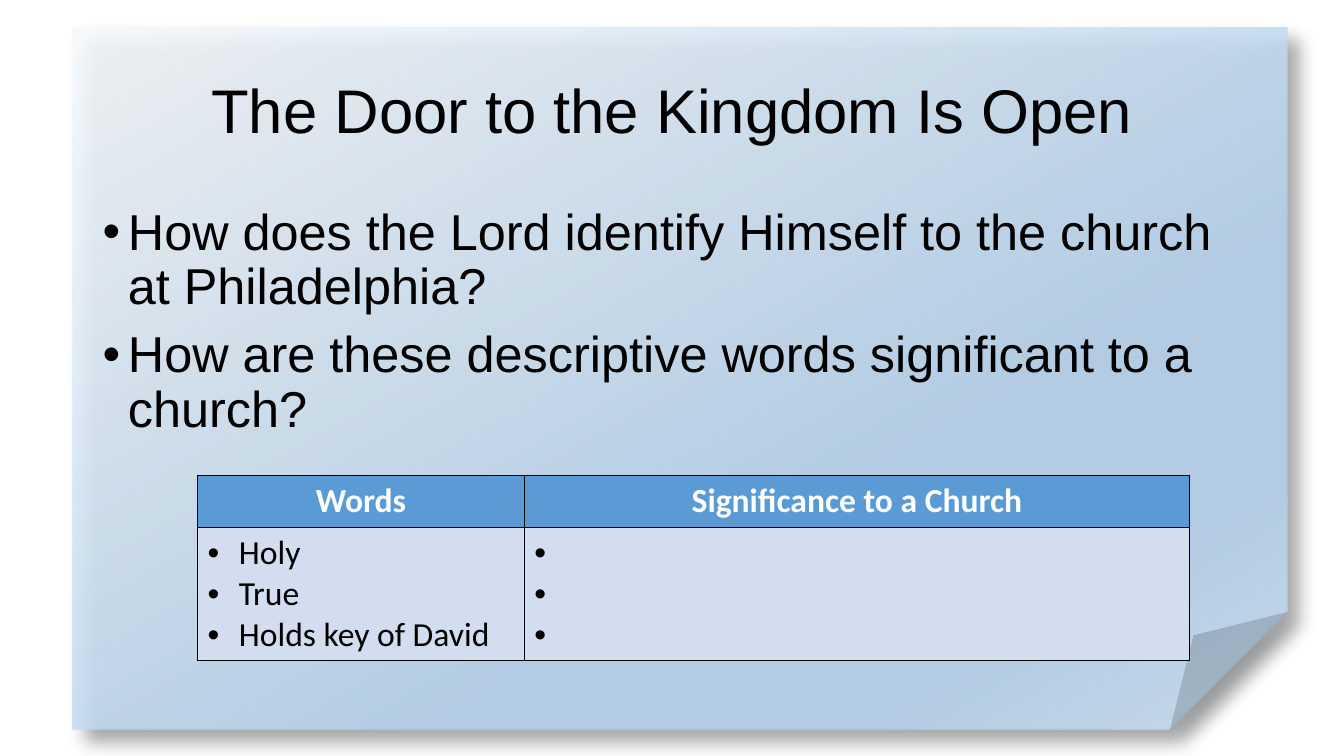
from lxml.etree import SubElement
from pptx import Presentation
from pptx.dml.color import RGBColor
from pptx.enum.shapes import MSO_SHAPE
from pptx.enum.text import MSO_ANCHOR, PP_ALIGN
from pptx.oxml.ns import qn
from pptx.util import Inches, Pt

BLACK, WHITE = "000000", "FFFFFF"
HEADER_BLUE, ROW_BLUE = "5B9BD5", "D2DEEF"


def rgb(value):
    return RGBColor.from_string(value)


def add_xml(parent, tag, **attrs):
    return SubElement(parent, qn(tag), {k: str(v) for k, v in attrs.items()})


def add_color(parent, value, alpha=100):
    color = add_xml(parent, "a:srgbClr", val=value)
    if alpha < 100:
        add_xml(color, "a:alpha", val=alpha * 1000)


class Deck:
    heading_font, table_font = "Arial", "Calibri"

    def __init__(self, prs):
        self.s = prs.slides.add_slide(prs.slide_layouts[6])

    def paragraphs(self, tf, texts, size, font, color=BLACK, bold=False,
                   align=None, indent=None, spacing=None, before=0):
        for i, text in enumerate(texts):
            p = tf.paragraphs[0] if i == 0 else tf.add_paragraph()
            if indent:
                pPr = p._p.get_or_add_pPr()
                pPr.set("marL", str(Inches(indent)))
                pPr.set("indent", str(-Inches(indent)))
                add_xml(pPr, "a:buFont", typeface="Arial")
                add_xml(pPr, "a:buChar", char="•")
            if align is not None:
                p.alignment = align
            if spacing:
                p.line_spacing = spacing
            if i and before:
                p.space_before = Pt(before)
            r = p.add_run()
            r.text = text
            r.font.size, r.font.name, r.font.bold = Pt(size), font, bold
            r.font.color.rgb = rgb(color)

    def text(self, box, texts, size, anchor=MSO_ANCHOR.TOP, **style):
        tf = self.s.shapes.add_textbox(*map(Inches, box)).text_frame
        tf.word_wrap = True
        tf.vertical_anchor = anchor
        self.paragraphs(tf, texts, size, self.heading_font, spacing=0.9, **style)

    def paper(self, box, stops, angle, alpha):
        sp = self.s.shapes.add_shape(MSO_SHAPE.FOLDED_CORNER, *map(Inches, box))
        sp.line.fill.background()
        sp.shadow.inherit = False
        sp.fill.gradient()
        spPr = sp.element.spPr
        # Gradient
        grad = spPr.find(qn("a:gradFill"))
        for child in list(grad):
            grad.remove(child)
        stop_list = add_xml(grad, "a:gsLst")
        for pos, color in stops:
            add_color(add_xml(stop_list, "a:gs", pos=pos * 1000), color, alpha)
        add_xml(grad, "a:lin", ang=angle * 60000, scaled=0)
        # Shadow
        shadow = add_xml(spPr.find(qn("a:effectLst")), "a:outerShdw",
                         blurRad=Pt(13), dist=Pt(13), dir=45 * 60000,
                         algn="tl", rotWithShape=0)
        add_color(shadow, BLACK, 40)

    def cell(self, cell, texts, fill, **style):
        tcPr = cell._tc.get_or_add_tcPr()
        for side in "LRTB":
            line = add_xml(tcPr, f"a:ln{side}", w=Pt(1))
            add_color(add_xml(line, "a:solidFill"), BLACK)
        cell.fill.solid()
        cell.fill.fore_color.rgb = rgb(fill)
        self.paragraphs(cell.text_frame, texts, 24, self.table_font, **style)

    def table(self, box, widths, heights, headers, columns):
        tbl = self.s.shapes.add_table(2, len(widths), *map(Inches, box)).table
        for row, height in zip(tbl.rows, heights):
            row.height = Inches(height)
        for i, width in enumerate(widths):
            tbl.columns[i].width = Inches(width)
            self.cell(tbl.cell(0, i), [headers[i]], HEADER_BLUE,
                      color=WHITE, bold=True, align=PP_ALIGN.CENTER)
            self.cell(tbl.cell(1, i), columns[i], ROW_BLUE, indent=0.31)


def main():
    prs = Presentation()
    prs.slide_width, prs.slide_height = Inches(13.33), Inches(7.5)
    deck = Deck(prs)

    # Folded paper background
    deck.paper((0.72, 0.27, 12.05, 6.97),
               [(0, "F7FAFD"), (64, "B5D2EC"), (83, "B5D2EC"), (100, "CEE1F2")],
               angle=60, alpha=87)

    # Title and questions
    deck.text((0.92, 0.4, 11.5, 1.45), ["The Door to the Kingdom Is Open"], 44,
              anchor=MSO_ANCHOR.MIDDLE, align=PP_ALIGN.CENTER)
    deck.text((0.92, 2, 11.5, 4.76),
              ["How does the Lord identify Himself to the church at Philadelphia?",
               "How are these descriptive words significant to a church?"],
              36, indent=0.25, before=10)

    # Worksheet table, with open bullets for the answers
    words = ["Holy", "True", "Holds key of David"]
    deck.table((1.96, 4.72, 9.84, 1.83), [3.24, 6.6], [0.51, 1.32],
               ["Words", "Significance to a Church"],
               [words, [" "] * len(words)])

    prs.save("out.pptx")


if __name__ == "__main__":
    main()
